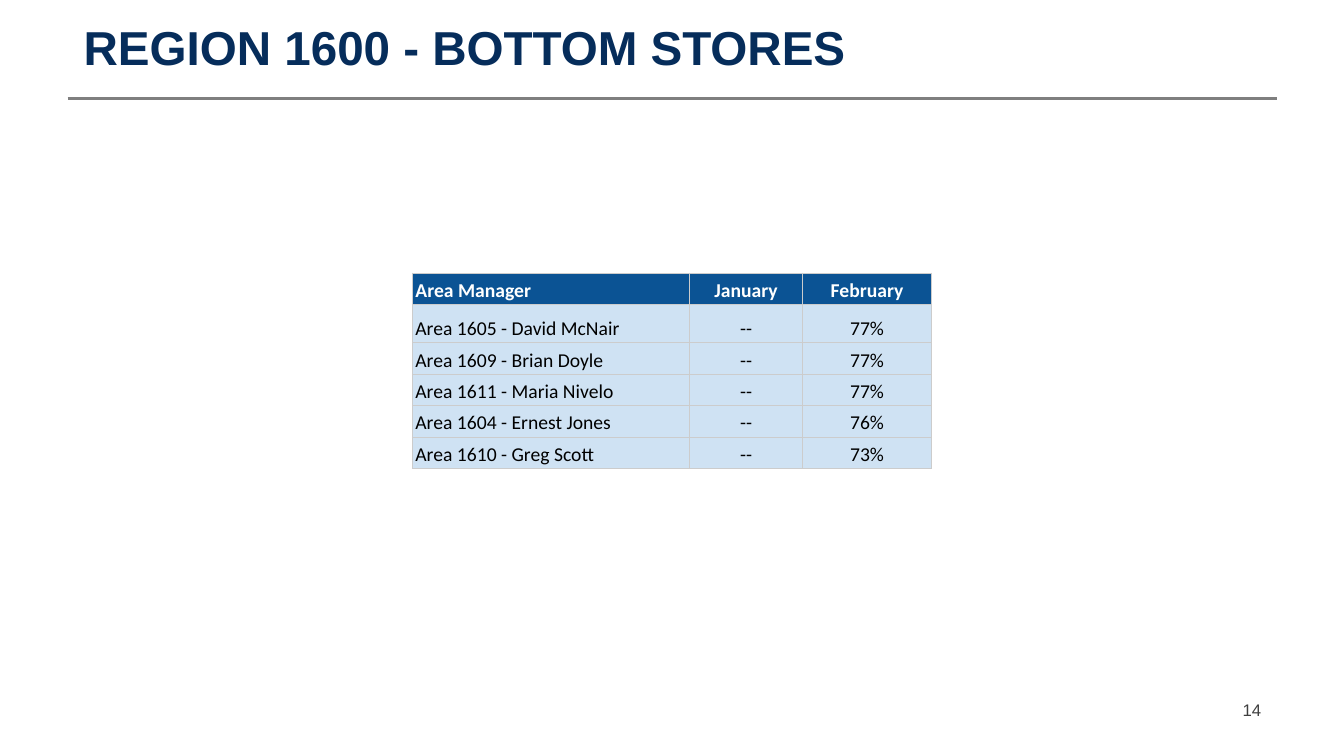
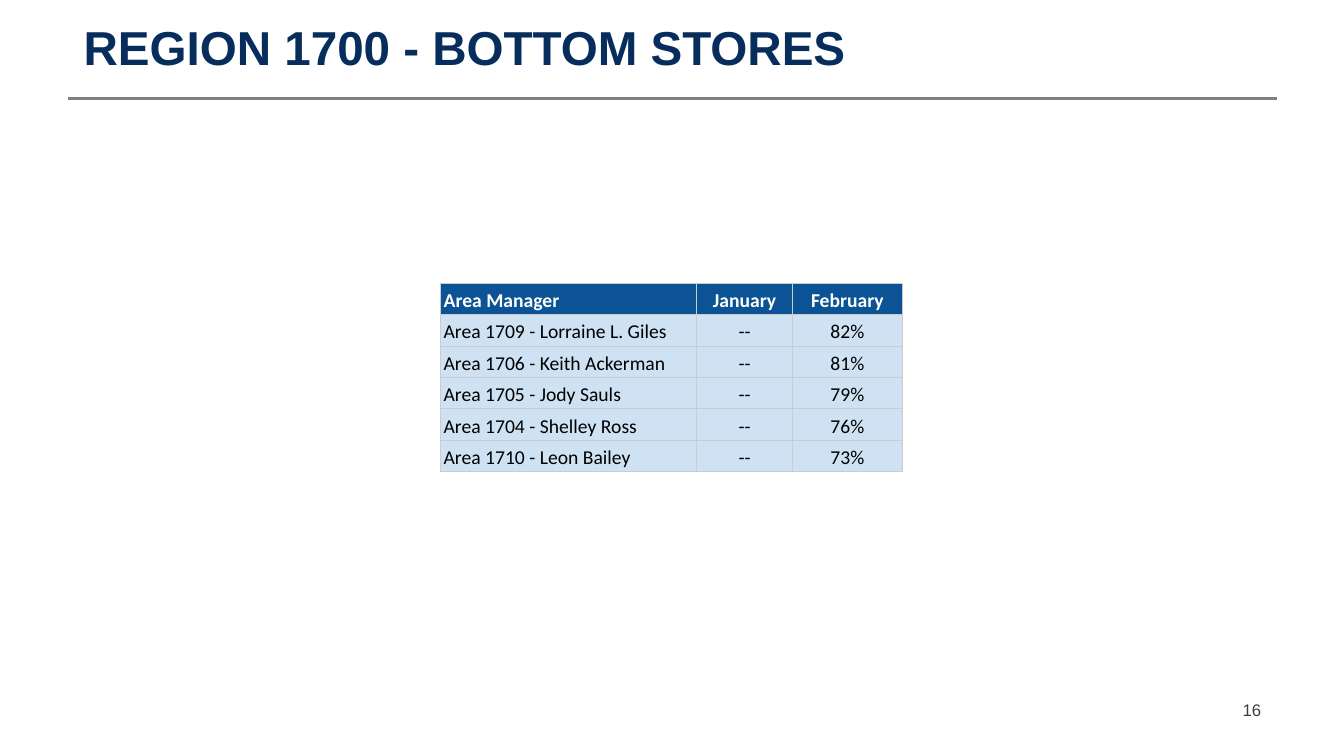
from lxml import etree
from pptx import Presentation
from pptx.dml.color import RGBColor
from pptx.enum.shapes import MSO_CONNECTOR
from pptx.enum.text import MSO_ANCHOR, MSO_AUTO_SIZE, PP_ALIGN
from pptx.oxml import parse_xml
from pptx.oxml.ns import nsdecls, qn
from pptx.util import Inches, Pt

STRAIGHT = MSO_CONNECTOR.STRAIGHT
LEFT, CENTER, RIGHT = PP_ALIGN.LEFT, PP_ALIGN.CENTER, PP_ALIGN.RIGHT
BOTTOM, MIDDLE = MSO_ANCHOR.BOTTOM, MSO_ANCHOR.MIDDLE
NO_AUTOFIT = MSO_AUTO_SIZE.NONE

COLORS = {
    "title": "062D5B",
    "rule": "7F7F7F",
    "number": "3F3F3F",
    "header": "0B5394",
    "header_text": "FFFFFF",
    "body": "CFE2F3",
    "body_text": "000000",
    "border": "CCCCCC",
}
TITLE_ONLY = 5
MARGIN = 0.67
CONTENT_WIDTH = 12
ROW_HEIGHT = 0.28
HEADINGS = ("Area Manager", "January", "February")

REGIONS = [
    {
        "title": "REGION 1600 - BOTTOM STORES",
        "number": "14",
        "position": (4.09, 2.71),
        "columns": (2.75, 1.12, 1.28),
        "first_row": 0.38,
        "areas": [
            ("Area 1605 - David McNair", "--", "77%"),
            ("Area 1609 - Brian Doyle", "--", "77%"),
            ("Area 1611 - Maria Nivelo", "--", "77%"),
            ("Area 1604 - Ernest Jones", "--", "76%"),
            ("Area 1610 - Greg Scott", "--", "73%"),
        ],
    },
    {
        "title": "REGION 1700 - BOTTOM STORES",
        "number": "16",
        "position": (4.37, 2.81),
        "columns": (2.54, 0.95, 1.09),
        "first_row": 0.3,
        "areas": [
            ("Area 1709 - Lorraine L. Giles", "--", "82%"),
            ("Area 1706 - Keith Ackerman", "--", "81%"),
            ("Area 1705 - Jody Sauls", "--", "79%"),
            ("Area 1704 - Shelley Ross", "--", "76%"),
            ("Area 1710 - Leon Bailey", "--", "73%"),
        ],
    },
]


def color(name):
    return RGBColor.from_string(COLORS[name])


def write(frame, text, font, size, color_name, align=LEFT, bold=False, spacing=None):
    paragraph = frame.paragraphs[0]
    paragraph.alignment = align
    paragraph.line_spacing = spacing
    run = paragraph.add_run()
    run.text = text
    run.font.name = font
    run.font.size = Pt(size)
    run.font.bold = bold
    run.font.color.rgb = color(color_name)


def set_frame(frame, anchor, side, end):
    frame.word_wrap = True
    frame.auto_size = NO_AUTOFIT
    frame.vertical_anchor = anchor
    frame.margin_left = frame.margin_right = Inches(side)
    frame.margin_top = frame.margin_bottom = Inches(end)


def add_title(slide, text):
    title = slide.shapes.title
    title.left, title.top = Inches(MARGIN), Inches(0.31)
    title.width, title.height = Inches(CONTENT_WIDTH), Inches(0.59)
    set_frame(title.text_frame, BOTTOM, 0.16, 0.16)
    write(title.text_frame, text, "Arial", 34, "title", bold=True, spacing=0.8)


def add_title_rule(slide):
    y = Inches(0.98)
    rule = slide.shapes.add_connector(
        STRAIGHT, Inches(MARGIN), y, Inches(MARGIN + CONTENT_WIDTH), y)
    rule.line.color.rgb = color("rule")
    rule.line.width = Pt(2)
    etree.SubElement(rule.element.spPr, qn("a:effectLst"))


def add_slide_number(slide, number):
    width = 3.11
    box = slide.shapes.add_textbox(
        Inches(MARGIN + CONTENT_WIDTH - width), Inches(6.84), Inches(width), Inches(0.4))
    set_frame(box.text_frame, MIDDLE, 0.16, 0.08)
    write(box.text_frame, number, "Arial", 12, "number", align=RIGHT)


def set_borders(cell):
    properties = cell._tc.get_or_add_tcPr()
    for side in ("lnL", "lnR", "lnT", "lnB"):
        properties.append(parse_xml(
            f'<a:{side} {nsdecls("a")} w="{Pt(0.75)}"><a:solidFill>'
            f'<a:srgbClr val="{COLORS["border"]}"/></a:solidFill></a:{side}>'))


def fill_cell(cell, text, align, is_header):
    kind = "header" if is_header else "body"
    set_borders(cell)
    cell.fill.solid()
    cell.fill.fore_color.rgb = color(kind)
    cell.vertical_anchor = BOTTOM
    cell.margin_left = cell.margin_right = Inches(0.03)
    cell.margin_top = cell.margin_bottom = Inches(0.02)
    write(cell.text_frame, text, "Calibri", 14, f"{kind}_text", align, is_header, 1.15)


def add_area_table(slide, region):
    rows = [HEADINGS, *region["areas"]]
    heights = [ROW_HEIGHT] * len(rows)
    heights[1] = region["first_row"]
    left, top = region["position"]
    table = slide.shapes.add_table(
        len(rows), len(HEADINGS), Inches(left), Inches(top),
        Inches(sum(region["columns"])), Inches(sum(heights))).table
    for column, width in zip(table.columns, region["columns"]):
        column.width = Inches(width)
    for r, (texts, height) in enumerate(zip(rows, heights)):
        table.rows[r].height = Inches(height)
        for c, text in enumerate(texts):
            fill_cell(table.cell(r, c), text, CENTER if c else LEFT, r == 0)


def main():
    deck = Presentation()
    deck.slide_width, deck.slide_height = Inches(13.33), Inches(7.5)
    for region in REGIONS:
        slide = deck.slides.add_slide(deck.slide_layouts[TITLE_ONLY])
        # Shared frame: title, rule and number
        add_title_rule(slide)
        add_title(slide, region["title"])
        add_slide_number(slide, region["number"])
        # Monthly scores by area
        add_area_table(slide, region)
    deck.save("out.pptx")


if __name__ == "__main__":
    main()
